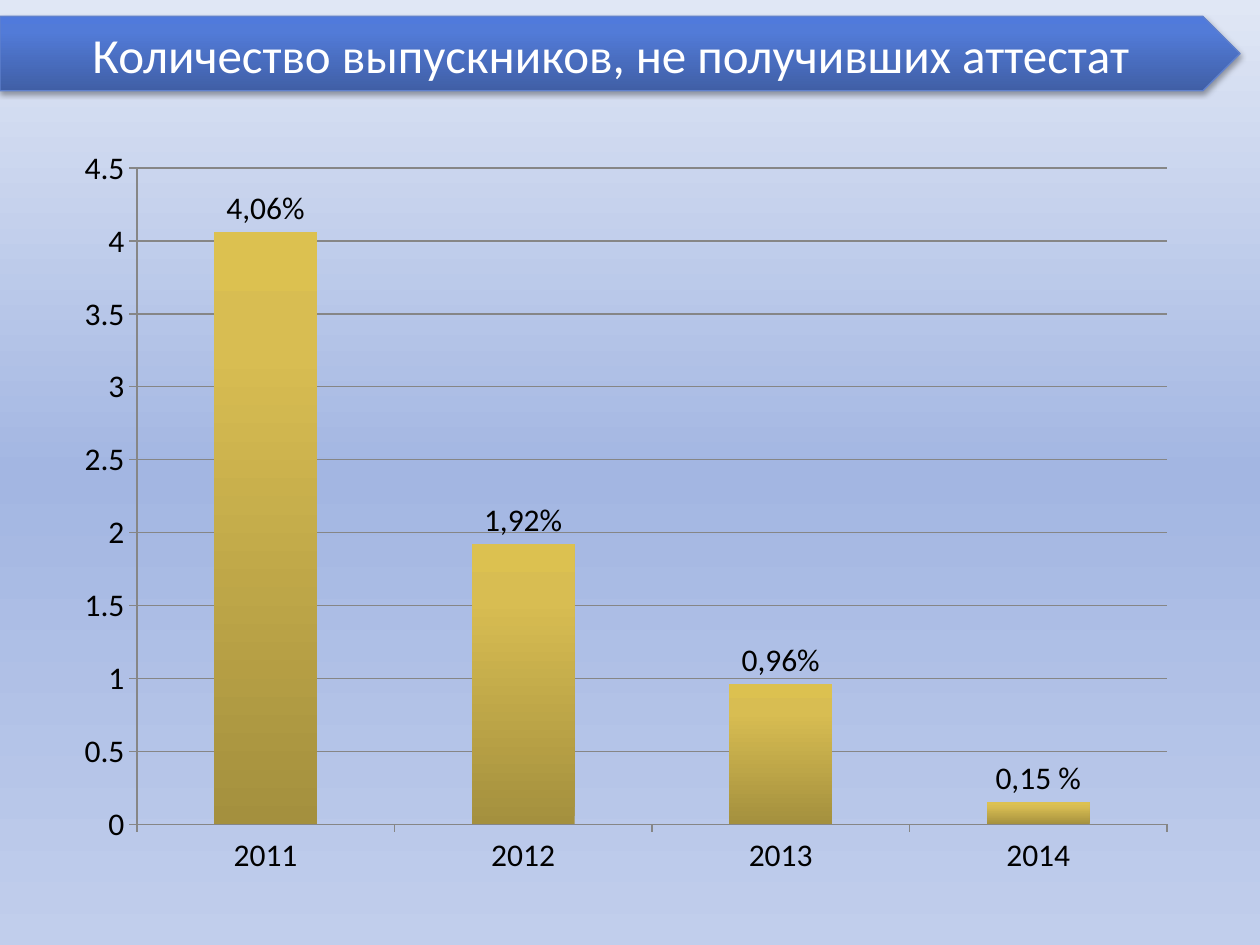
"""Builds a slide with a column chart of graduates without a certificate."""
from lxml.etree import SubElement as Sub
from pptx import Presentation
from pptx.chart.data import CategoryChartData as Data
from pptx.dml.color import RGBColor as Rgb
from pptx.enum.chart import XL_CHART_TYPE as Kind
from pptx.enum.chart import XL_LABEL_POSITION as Spot
from pptx.enum.chart import XL_TICK_MARK as Tick
from pptx.enum.shapes import MSO_SHAPE as Form
from pptx.enum.text import MSO_ANCHOR as Anchor
from pptx.enum.text import PP_ALIGN as Align
from pptx.oxml.ns import qn
from pptx.util import Cm, Pt

HUES = {
    "text": "000000", "title": "FFFFFF", "edge": "6081CD", "axis": "868686",
    "sky_top": "E0E7F5", "sky_mid": "A3B6E2", "sky_low": "C1CEEC",
    "blue_low": "405FA6", "blue_mid": "527BD8", "blue_top": "507ADC",
    "gold_low": "A4903E", "gold_mid": "D8BD52", "gold_top": "DCC150",
}
FONT = "Calibri"


def blend(fill, root, angle, stops):
    fill.gradient()
    fill.gradient_angle = angle
    group = root.find(".//" + qn("a:gsLst"))
    group.clear()
    for place, hue in stops:
        stop = Sub(group, qn("a:gs"), pos=str(place * 1000))
        Sub(stop, qn("a:srgbClr"), val=HUES[hue])


def style(font, size, hue):
    font.name = FONT
    font.size = Pt(size)
    font.bold = False
    font.color.rgb = Rgb.from_string(HUES[hue])


deck = Presentation()
deck.slide_width, deck.slide_height = Cm(25.4), Cm(19.05)
slide = deck.slides.add_slide(deck.slide_layouts[6])
blend(slide.background.fill, slide.element, 270,
      [(0, "sky_top"), (50, "sky_mid"), (100, "sky_low")])

banner = slide.shapes.add_shape(Form.PENTAGON, Cm(0), Cm(0.33), Cm(25), Cm(1.5))
blend(banner.fill, banner.element, 90,
      [(0, "blue_low"), (80, "blue_mid"), (100, "blue_top")])
banner.line.color.rgb = Rgb.from_string(HUES["edge"])
banner.line.width = Pt(0.75)
banner.shadow.inherit = False
glow = Sub(banner.element.find(".//" + qn("a:effectLst")), qn("a:outerShdw"),
           blurRad=str(Pt(3.1)), dist=str(Pt(1.8)), dir="5400000", rotWithShape="0")
shade = Sub(glow, qn("a:srgbClr"), val=HUES["text"])
Sub(shade, qn("a:alpha"), val="35000")
frame = banner.text_frame
frame.word_wrap = True
frame.vertical_anchor = Anchor.MIDDLE
para = frame.paragraphs[0]
para.alignment = Align.CENTER
run = para.add_run()
run.text = "Количество выпускников, не получивших аттестат"
style(run.font, 28, "title")

data = Data()
data.categories = ["2011", "2012", "2013", "2014"]
data.add_series("Series 1", [4.06, 1.92, 0.96, 0.15])
chart = slide.shapes.add_chart(Kind.COLUMN_CLUSTERED, Cm(1.25), Cm(2.7),
                               Cm(22.73), Cm(15.24), data).chart
style(chart.font, 18, "text")
chart.has_legend = False
chart.has_title = False

scale = chart.value_axis
scale.minimum_scale, scale.maximum_scale, scale.major_unit = 0, 4.5, 0.5
scale.has_major_gridlines = True
for axis in (chart.category_axis, scale):
    axis.major_tick_mark = Tick.OUTSIDE
    axis.minor_tick_mark = Tick.NONE
for part in (chart.category_axis, scale, scale.major_gridlines):
    part.format.line.color.rgb = Rgb.from_string(HUES["axis"])
    part.format.line.width = Pt(0.75)

plot = chart.plots[0]
plot.gap_width = 150
plot.vary_by_categories = False
bars = plot.series[0]
blend(bars.format.fill, chart.element, 90,
      [(0, "gold_low"), (80, "gold_mid"), (100, "gold_top")])
bars.data_labels.show_value = True
bars.data_labels.position = Spot.OUTSIDE_END
for spot, text in enumerate(["4,06%", "1,92%", "0,96%", "0,15 %"]):
    label = bars.points[spot].data_label
    run = label.text_frame.paragraphs[0].add_run()
    run.text = text
    style(run.font, 18, "text")
    label.position = Spot.OUTSIDE_END

deck.save("out.pptx")
